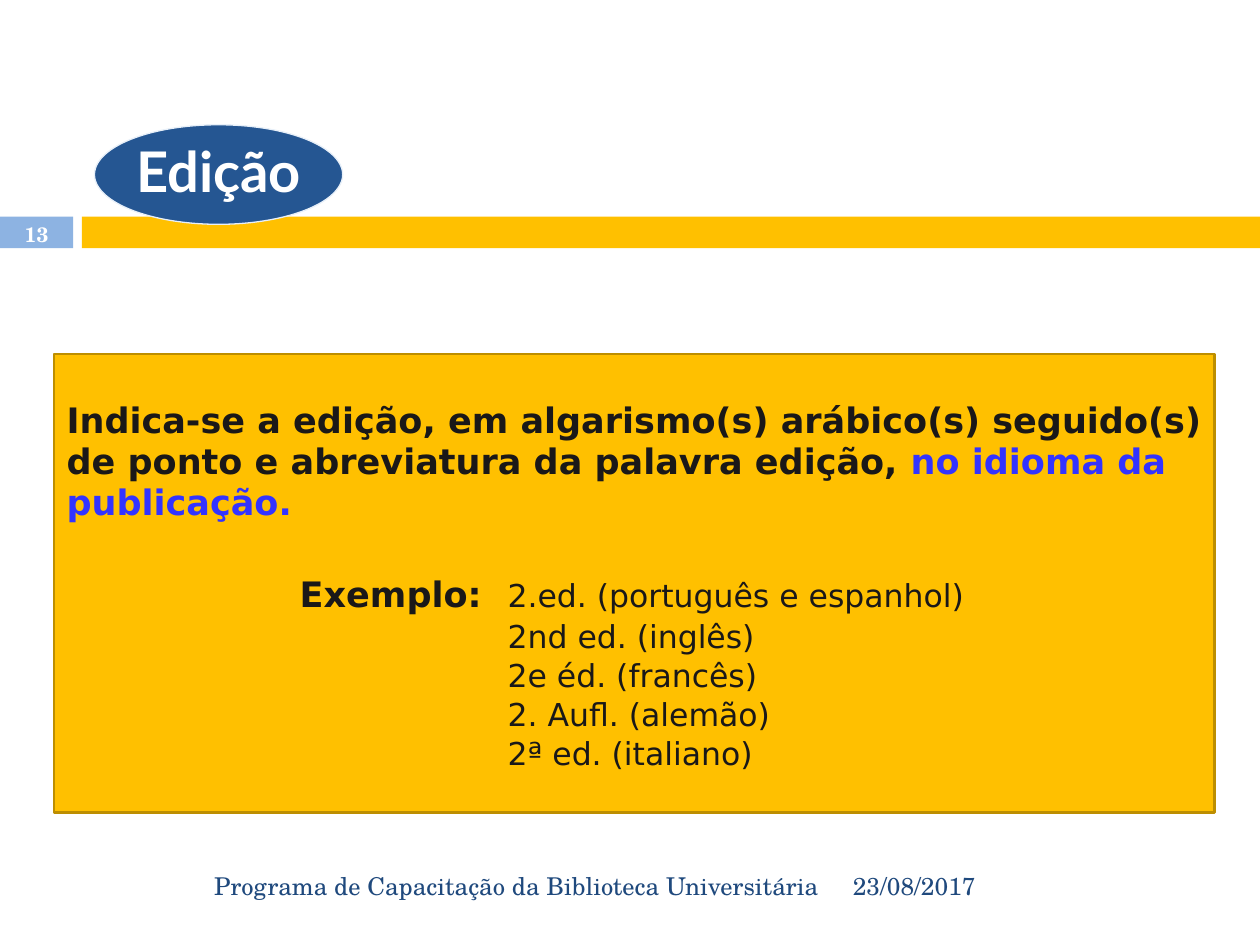
import pptx
import pptx.util
import pptx.dml.color
import pptx.enum.shapes
import pptx.enum.text

RGBColor = pptx.dml.color.RGBColor
MSO_SHAPE = pptx.enum.shapes.MSO_SHAPE
PP_ALIGN = pptx.enum.text.PP_ALIGN
MSO_ANCHOR = pptx.enum.text.MSO_ANCHOR

GOLD = RGBColor(0xFF, 0xC0, 0x00)
DARK_GOLD = RGBColor(0xBD, 0x8E, 0x00)
LIGHT_BLUE = RGBColor(0x8D, 0xB3, 0xE2)
OVAL_BLUE = RGBColor(0x25, 0x56, 0x92)
PALE_BLUE = RGBColor(0xE8, 0xF0, 0xF9)
NAVY = RGBColor(0x1F, 0x49, 0x7D)
BRIGHT_BLUE = RGBColor(0x33, 0x33, 0xFF)
INK = RGBColor(0x1A, 0x18, 0x18)
WHITE = RGBColor(0xFF, 0xFF, 0xFF)

BODY, TITLE, FOOTER = "DejaVu Sans", "Lato", "TeX Gyre Schola"
COLUMNS, ROWS = 100, 75
BAR_TOP, BAR_HEIGHT = 17.2, 2.5
FOOTER_TOP, FOOTER_HEIGHT = 68.3, 4
EXAMPLES = ["2nd ed. (inglês)", "2e éd. (francês)",
            "2. Aufl. (alemão)", "2ª ed. (italiano)"]


class SlideBuilder:
    def __init__(self, prs):
        self.column = prs.slide_width / COLUMNS
        self.row = prs.slide_height / ROWS
        self.s = prs.slides.add_slide(prs.slide_layouts[6])

    def place(self, x, y, w, h):
        return (round(x * self.column), round(y * self.row),
                round(w * self.column), round(h * self.row))

    def shape(self, kind, at, fill, line=None, width=0.75):
        sp = self.s.shapes.add_shape(kind, *self.place(*at))
        sp.shadow.inherit = False
        sp.fill.solid()
        sp.fill.fore_color.rgb = fill
        if line is None:
            sp.line.fill.background()
        else:
            sp.line.color.rgb = line
            sp.line.width = pptx.util.Pt(width)
        return sp

    def label(self, at, text, align, size=14, color=NAVY, bold=False):
        sp = self.s.shapes.add_textbox(*self.place(*at))
        tf = sp.text_frame
        tf.word_wrap = True
        tf.vertical_anchor = MSO_ANCHOR.MIDDLE
        p = tf.paragraphs[0]
        p.alignment = align
        p.add_run().text = text
        self.font(p, FOOTER, size, color, bold)

    def paragraph(self, p, texts, size, spacing, bold=False, left=0, first=0):
        p.alignment = PP_ALIGN.LEFT
        p.line_spacing = spacing
        pPr = p._p.get_or_add_pPr()
        pPr.set("marL", str(round(left * self.column)))
        pPr.set("indent", str(round(first * self.column)))
        for text in texts:
            p.add_run().text = text
        self.font(p, BODY, size, INK, bold)

    def font(self, item, name, size, color, bold):
        item.font.name = name
        item.font.size = pptx.util.Pt(size)
        item.font.color.rgb = color
        item.font.bold = bold


def main():
    prs = pptx.Presentation()
    prs.slide_width = pptx.util.Inches(10)
    prs.slide_height = pptx.util.Inches(7.5)
    slide = SlideBuilder(prs)

    slide.shape(MSO_SHAPE.RECTANGLE, (0, BAR_TOP, 5.8, BAR_HEIGHT), LIGHT_BLUE)
    slide.shape(MSO_SHAPE.RECTANGLE, (6.5, BAR_TOP, 93.5, BAR_HEIGHT), GOLD)

    panel = slide.shape(MSO_SHAPE.RECTANGLE, (4.3, 28.1, 92.1, 36.4),
                        GOLD, DARK_GOLD, 1.5)
    tf = panel.text_frame
    tf.word_wrap = True
    tf.vertical_anchor = MSO_ANCHOR.TOP
    tf.margin_top = pptx.util.Inches(0.37)

    p = tf.paragraphs[0]
    slide.paragraph(p, ["Indica-se a edição, em algarismo(s) arábico(s) seguido(s) "
                        "de ponto e abreviatura da palavra edição, ",
                        "no idioma da publicação."], 20, 0.98, bold=True)
    p.runs[1].font.color.rgb = BRIGHT_BLUE

    p = tf.add_paragraph()
    slide.paragraph(p, ["Exemplo:\t", "2.ed. (português e espanhol)"],
                    20, 0.98, bold=True, left=35, first=-16.5)
    p.space_before = pptx.util.Pt(29)
    slide.font(p.runs[1], BODY, 18, INK, False)

    for example in EXAMPLES:
        slide.paragraph(tf.add_paragraph(), [example], 18, 1.03, left=35)

    oval = slide.shape(MSO_SHAPE.OVAL, (7.5, 9.9, 19.7, 7.9), OVAL_BLUE, PALE_BLUE)
    tf = oval.text_frame
    tf.word_wrap = False
    tf.vertical_anchor = MSO_ANCHOR.MIDDLE
    p = tf.paragraphs[0]
    p.alignment = PP_ALIGN.CENTER
    p.line_spacing = 0.9
    p.add_run().text = "Edição"
    slide.font(p, TITLE, 32, WHITE, True)

    slide.label((66.7, FOOTER_TOP, 29.2, FOOTER_HEIGHT), "23/08/2017", PP_ALIGN.LEFT)
    slide.label((6.7, FOOTER_TOP, 59.3, FOOTER_HEIGHT),
                "Programa de Capacitação da Biblioteca Universitária", PP_ALIGN.RIGHT)
    slide.label((0, BAR_TOP, 5.8, 2.7), "13", PP_ALIGN.CENTER, 11.9, WHITE, True)

    prs.save("out.pptx")


if __name__ == "__main__":
    main()
